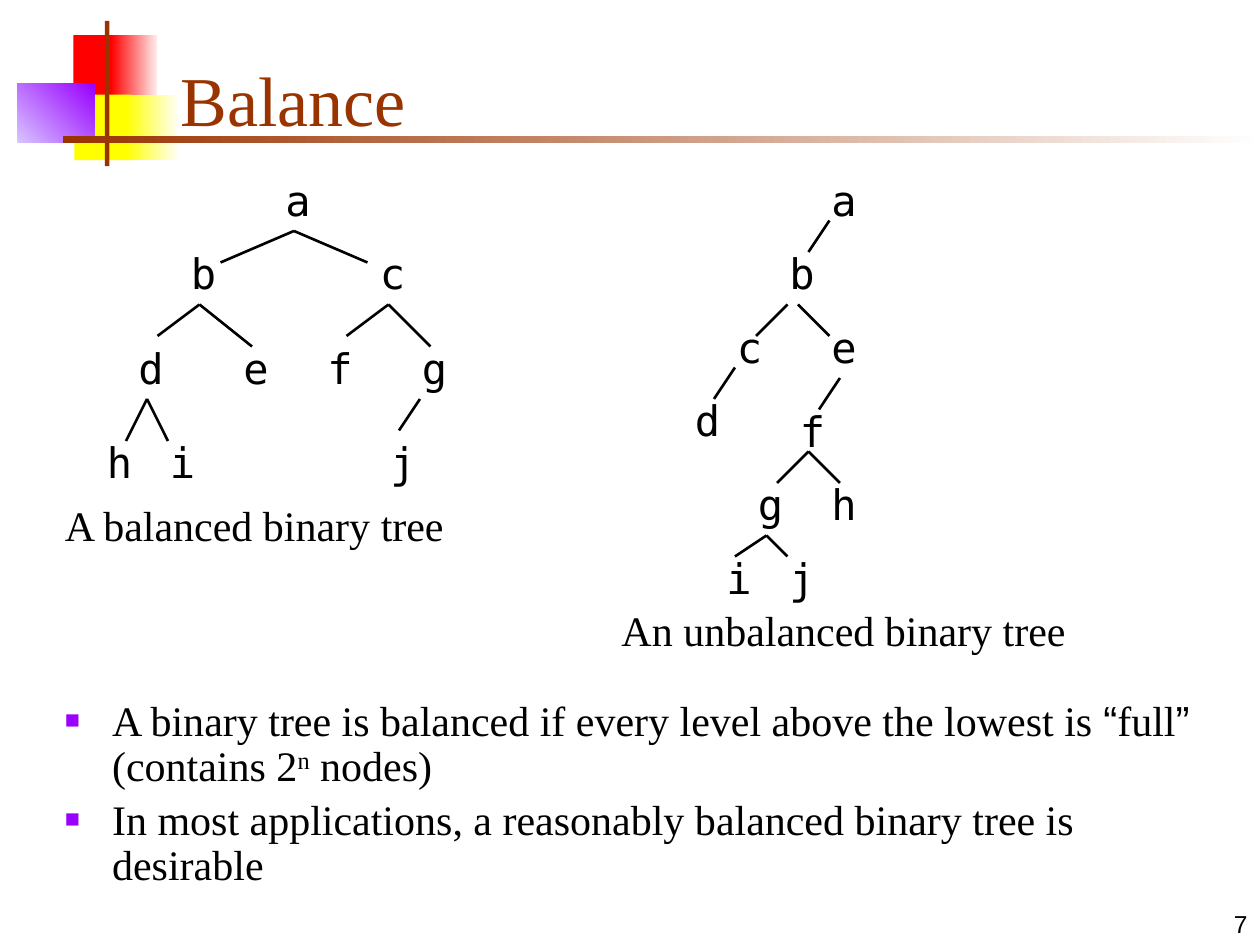
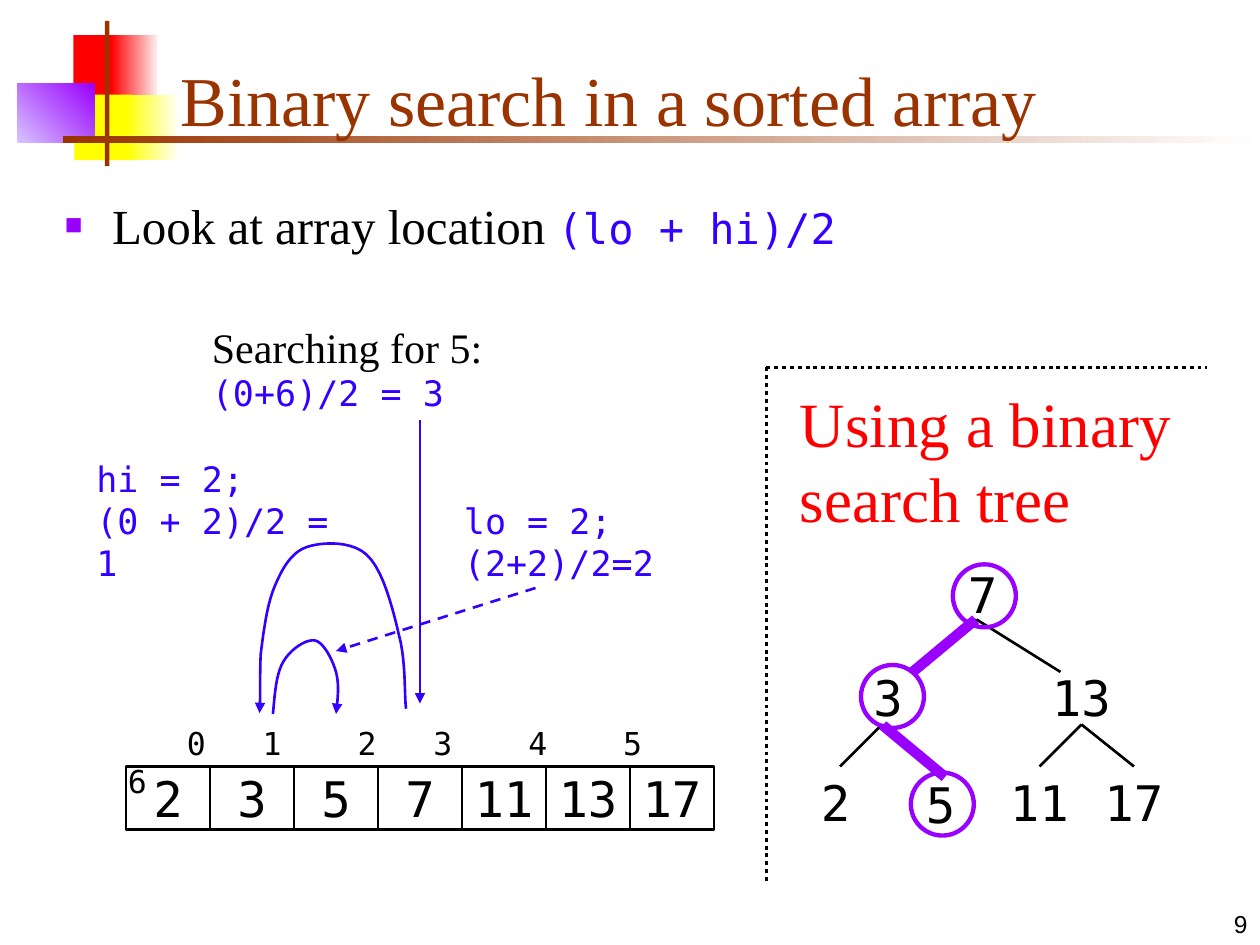
"""Build two slides on balanced binary trees and binary search."""
import lxml.etree
import pptx
import pptx.dml.color
import pptx.enum.dml
import pptx.enum.shapes
import pptx.enum.text
import pptx.oxml.ns
import pptx.util

Pt = pptx.util.Pt
RGB = pptx.dml.color.RGBColor
SHAPE = pptx.enum.shapes.MSO_SHAPE
DASH = pptx.enum.dml.MSO_LINE
ALIGN = pptx.enum.text.PP_ALIGN
ANCHOR = pptx.enum.text.MSO_ANCHOR
qn = pptx.oxml.ns.qn

BLACK = RGB(0x00, 0x00, 0x00)
WHITE = RGB(0xFF, 0xFF, 0xFF)
RED = RGB(0xFF, 0x00, 0x00)
PINK = RGB(0xFF, 0xEA, 0xEA)
YELLOW = RGB(0xFF, 0xFF, 0x00)
CREAM = RGB(0xFF, 0xFF, 0xF0)
PURPLE = RGB(0x99, 0x00, 0xFF)
LILAC = RGB(0xD8, 0xC4, 0xFF)
BROWN = RGB(0x99, 0x33, 0x00)
BLUE = RGB(0x33, 0x00, 0xFF)
SERIF, MONO, SANS = "Times New Roman", "DejaVu Sans Mono", "Arial"

BANDS = [
    (42, 20, 25, 37.5, RED, None, 0),
    (63.5, 20, 26, 37.5, RED, PINK, 0),
    (42.5, 54, 33, 37.5, YELLOW, None, 0),
    (72, 54, 29, 37.5, YELLOW, CREAM, 0),
    (10, 48, 44, 33.5, LILAC, PURPLE, 45),
    (60, 12, 2.5, 83, BROWN, None, 0),
    (36, 77.75, 684, 4, BROWN, WHITE, 0),
]


def set_font(font, name, size, color):
    font.name, font.size, font.color.rgb = name, Pt(size), color


def sub(parent, tag, **attrs):
    return lxml.etree.SubElement(parent, qn(tag), attrs)


def bezier(points, steps=10):
    """Return the points along a chain of cubic curves."""
    path = [points[0]]
    for i in range(0, len(points) - 1, 3):
        a, b, c, d = points[i:i + 4]
        for t in (k / steps for k in range(1, steps + 1)):
            u = 1 - t
            path.append(tuple(u**3 * a[n] + 3 * u * u * t * b[n] + 3 * u * t * t * c[n] + t**3 * d[n]
                              for n in (0, 1)))
    return path


class Deck:
    """Hold the shared style and the current slide."""

    def __init__(self):
        self.prs = pptx.Presentation()
        self.prs.slide_width, self.prs.slide_height = Pt(720), Pt(540)
        self.layout = self.prs.slide_layouts[5]
        self.s = None

    def slide(self, title, number):
        first = self.s is None
        self.s = self.prs.slides.add_slide(self.layout)
        if first:
            self.bands()
        sp = self.s.shapes.title
        sp.left, sp.top, sp.width, sp.height = Pt(96), Pt(18), Pt(613.5), Pt(66)
        tf = sp.text_frame
        tf.text = title
        tf.auto_size = pptx.enum.text.MSO_AUTO_SIZE.NONE
        tf.vertical_anchor = ANCHOR.BOTTOM
        p = tf.paragraphs[0]
        p.alignment = ALIGN.LEFT
        set_font(p.font, SERIF, 40, BROWN)
        tf = self.text([number], 570, 504, 150, 36, SANS, 14)
        tf.vertical_anchor = ANCHOR.BOTTOM
        tf.paragraphs[0].alignment = ALIGN.RIGHT

    def bands(self):
        """Draw the corner blocks and rules once, on the layout."""
        for x, y, w, h, color, fade, angle in BANDS:
            sp = self.shape(SHAPE.RECTANGLE, x, y, w, h)
            if fade is None:
                sp.fill.solid()
                sp.fill.fore_color.rgb = color
            else:
                sp.fill.gradient()
                sp.fill.gradient_angle = angle
                for stop, rgb in zip(sp.fill.gradient_stops, (color, fade)):
                    stop.color.rgb = rgb
            self.layout.shapes.element.append(sp.element)

    def shape(self, kind, x, y, w, h, color=None, weight=1.5):
        sp = self.s.shapes.add_shape(kind, Pt(x), Pt(y), Pt(w), Pt(h))
        sp.shadow.inherit = False
        sp.fill.background()
        self.stroke(sp.line, color, weight)
        return sp

    def stroke(self, line, color, weight, dash=None, arrow=False):
        if color is None:
            line.fill.background()
            return
        line.color.rgb, line.width = color, Pt(weight)
        if dash:
            line.dash_style = dash
        if arrow:
            sub(line._get_or_add_ln(), "a:tailEnd", type="triangle")

    def text(self, lines, x, y, w, h, font=SERIF, size=24, color=BLACK):
        """Add a text box; a line is a string or a list of (text, overrides)."""
        tf = self.s.shapes.add_textbox(Pt(x), Pt(y), Pt(w), Pt(h)).text_frame
        tf.word_wrap = True
        for i, line in enumerate(lines):
            p = tf.paragraphs[0] if i == 0 else tf.add_paragraph()
            set_font(p.font, font, size, color)
            for part, style in [(line, {})] if isinstance(line, str) else line:
                r = p.add_run()
                r.text = part
                if "font" in style:
                    set_font(r.font, style["font"], style.get("size", size), style.get("color", color))
                if "baseline" in style:
                    r._r.get_or_add_rPr().set("baseline", style["baseline"])
        return tf

    def bullets(self, lines, y, h, size, spacing):
        tf = self.text(lines, 30, y, 675.5, h, size=size)
        for p in tf.paragraphs:
            p.line_spacing, p.space_before = spacing, Pt(size * 0.2)
            pPr = p._p.get_or_add_pPr()
            pPr.set("marL", str(Pt(27)))
            pPr.set("indent", str(-Pt(27)))
            color = sub(pPr, "a:buClr")
            sub(color, "a:srgbClr", val=str(PURPLE))
            marks = [color, sub(pPr, "a:buSzPct", val="60000"),
                     sub(pPr, "a:buFont", typeface=SANS), sub(pPr, "a:buChar", char="■")]
            for mark in marks:
                pPr.find(qn("a:defRPr")).addprevious(mark)

    def tabs(self, p, stops):
        pPr = p._p.get_or_add_pPr()
        tab_list = sub(pPr, "a:tabLst")
        for stop in stops:
            sub(tab_list, "a:tab", pos=str(Pt(stop)), algn="l")
        pPr.find(qn("a:defRPr")).addprevious(tab_list)

    def line(self, start, end, color=BLACK, weight=1.5, dash=None, arrow=False):
        c = self.s.shapes.add_connector(pptx.enum.shapes.MSO_CONNECTOR.STRAIGHT,
                                        *(Pt(v) for v in (*start, *end)))
        self.stroke(c.line, color, weight, dash, arrow)
        sub(c.element.spPr, "a:effectLst")

    def curve(self, points):
        path = [(Pt(x), Pt(y)) for x, y in bezier(points)]
        fb = self.s.shapes.build_freeform(*path[0])
        fb.add_line_segments(path[1:], close=False)
        sp = fb.convert_to_shape()
        sp.shadow.inherit = False
        sp.fill.background()
        self.stroke(sp.line, BLUE, 1.5, arrow=True)

    def tree(self, nodes, edges, width=30, size=24):
        for label, x, y in nodes:
            self.text([label], x, y, width, 36, MONO, size)
        for start, ends in edges:
            for end in ends:
                self.line(start, end)


def balance(deck):
    deck.slide("Balance", "7")
    quote = {"font": SANS}
    deck.bullets([
        [("A binary tree is balanced if every level above the lowest is ", {}), ("“", quote),
         ("full", {}), ("”", quote), (" (contains 2", {}), ("n", {"baseline": "30000"}),
         (" nodes)", {})],
        "In most applications, a reasonably balanced binary tree is desirable",
    ], 396.5, 86, 24, 0.9)
    deck.tree(
        [("a", 156, 96), ("b", 102, 138), ("c", 210, 138), ("d", 72, 192), ("e", 132, 192),
         ("f", 180, 192), ("g", 234, 192), ("h", 54, 246), ("i", 90, 246), ("j", 216, 246)],
        [((168, 132), [(126, 150), (210, 150)]), ((114, 174), [(90, 192), (144, 198)]),
         ((222, 174), [(198, 192), (246, 198)]), ((84, 228), [(72, 252), (96, 252)]),
         ((240, 228), [(228, 246)])])
    deck.text(["A balanced binary tree"], 30, 282, 246, 36)
    deck.tree(
        [("a", 468, 96), ("b", 444, 138), ("c", 414, 180), ("d", 390, 222), ("e", 468, 180),
         ("f", 450, 228), ("g", 426, 270), ("h", 468, 270), ("i", 408, 312), ("j", 444, 312)],
        [((474, 126), [(462, 144)]), ((450, 174), [(432, 192)]), ((456, 174), [(474, 192)]),
         ((420, 210), [(408, 228)]), ((480, 216), [(468, 234)]),
         ((462, 258), [(444, 276), (480, 276)]), ((438, 306), [(420, 318), (450, 318)])])
    deck.text(["An unbalanced binary tree"], 348, 342, 270, 36)


def binary_search(deck):
    deck.slide("Binary search in a sorted array", "9")
    code = {"font": MONO, "size": 24, "color": BLUE}
    deck.bullets([[("Look at array location ", {}), ("(lo + hi)/2", code)]], 108, 49, 28, 1.0)

    for i, value in enumerate(["2", "3", "5", "7", "11", "13", "17"]):
        tf = deck.shape(SHAPE.FLOWCHART_PROCESS, 72 + 48 * i, 438, 48, 36, BLACK).text_frame
        tf.text, tf.word_wrap, tf.vertical_anchor = value, False, ANCHOR.MIDDLE
        p = tf.paragraphs[0]
        p.alignment = ALIGN.CENTER
        set_font(p.font, MONO, 28, BLACK)
    tf = deck.text(["\t0\t1\t2\t3\t4\t5", "6"], 66, 410, 342, 32, MONO, 18)
    deck.tabs(tf.paragraphs[0], [33.7, 77, 131.25, 174.6, 228.8, 283])

    deck.text(["Searching for 5:", [("(0+6)/2 = 3", {**code, "size": 20})]], 114, 180, 180, 60)
    deck.line((240, 240), (240, 402), BLUE, arrow=True)
    deck.text(["hi = 2;", "(0 + 2)/2 = 1"], 48, 258, 168, 55, MONO, 20, BLUE)
    deck.curve([(232, 405), (231, 397.5), (232, 377.5), (228, 363), (224.6, 348.5), (219, 325.5),
                (209.5, 317), (201, 309), (184.5, 309.6), (175.5, 312.5), (166.5, 315.5),
                (161.3, 324.7), (157, 335), (152.6, 345), (150.5, 361.4), (149, 373.7),
                (148.3, 386), (149, 400), (148.3, 407.5)])
    deck.text(["lo = 2;", "(2+2)/2=2"], 258, 282, 126, 55, MONO, 20, BLUE)
    deck.curve([(156, 408), (157, 397), (157.7, 385), (162, 378), (166, 371), (175, 365),
                (180, 366), (185, 367), (190, 377), (192, 384), (194, 391), (193, 400), (192, 408)])
    deck.line((306, 336), (192, 372), BLUE, dash=DASH.DASH, arrow=True)

    deck.tree(
        [("7", 546, 319), ("3", 492, 378), ("13", 594, 378), ("2", 462, 438), ("5", 522, 439),
         ("11", 570, 438), ("17", 624, 438)],
        [((504, 414), [(480, 438), (534, 438)]), ((618, 414), [(594, 438), (648, 438)]),
         ((558, 354), [(522, 384), (606, 384)])], 60, 28)
    deck.text(["Using a binary search tree"], 450, 216, 240, 94, size=36, color=RED)
    for end in [(438, 504), (690, 210)]:
        deck.line((438, 210), end, BLACK, 2.25, DASH.ROUND_DOT)
    for x, y in [(544.5, 322.5), (492, 380), (520.5, 441.5)]:
        deck.shape(SHAPE.OVAL, x, y, 36, 36, PURPLE, 2.5)
    for start, end in [((557.5, 354), (521.5, 384)), ((504.5, 414.5), (540, 444))]:
        deck.line(start, end, PURPLE, 6)


def main():
    deck = Deck()
    balance(deck)
    binary_search(deck)
    deck.prs.save("out.pptx")


if __name__ == "__main__":
    main()
